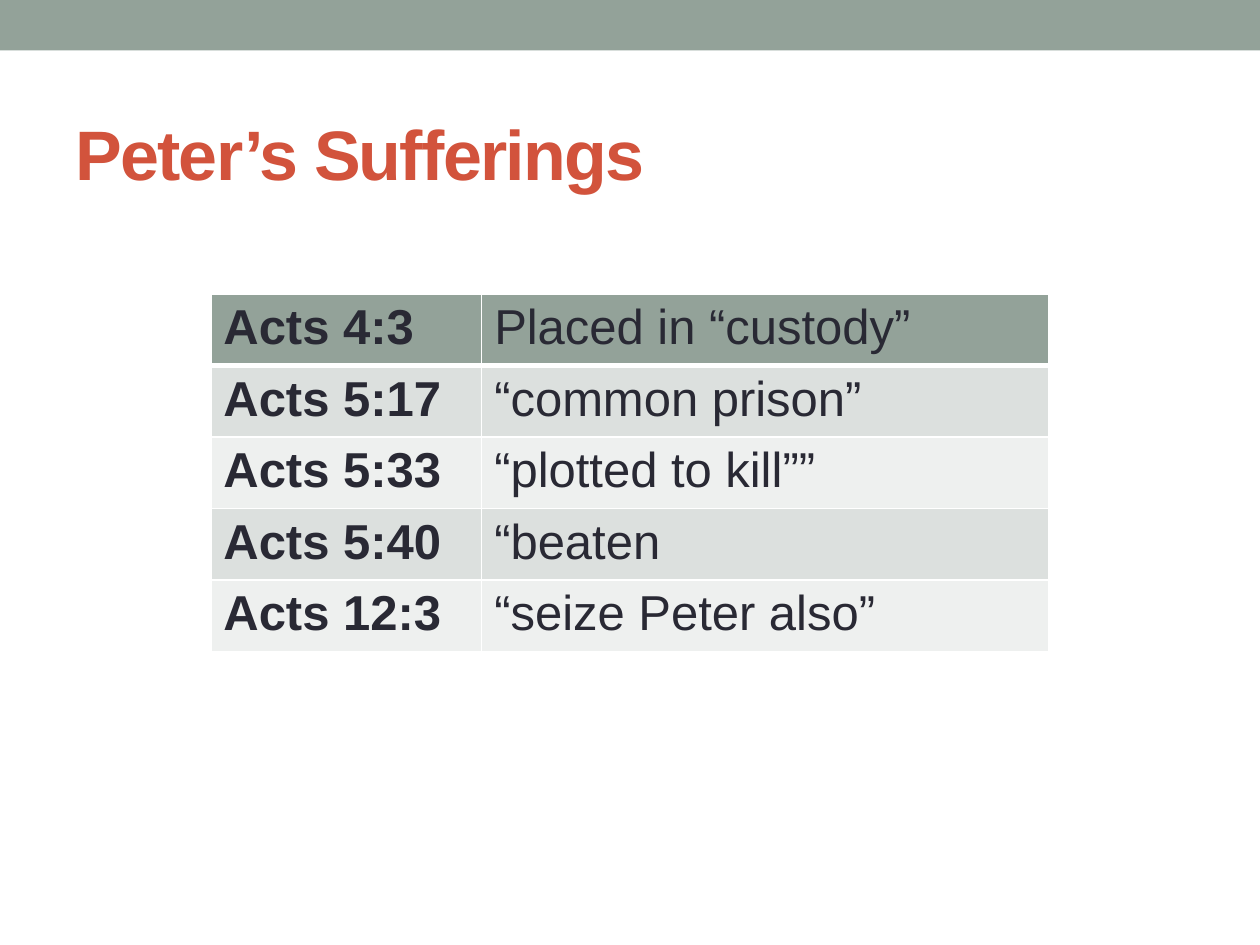
from pptx import Presentation
from pptx.dml.color import RGBColor
from pptx.enum.shapes import MSO_SHAPE as Shape
from pptx.enum.text import MSO_ANCHOR as Anchor
from pptx.oxml import parse_xml
from pptx.oxml.ns import nsdecls
from pptx.util import Cm, Pt

SAGE, RUST, INK, WHITE = "93A299", "D2533C", "292934", "FFFFFF"
BANDS = ("DCE0DE", "EEF0EF")

SUFFERINGS = [
    ("Acts 4:3", "Placed in “custody”"),
    ("Acts 5:17", "“common prison”"),
    ("Acts 5:33", "“plotted to kill””"),
    ("Acts 5:40", "“beaten"),
    ("Acts 12:3", "“seize Peter also”"),
]


def color(value):
    return RGBColor.from_string(value)


def box(*lengths):
    return [Cm(length) for length in lengths]


class SlideBuilder:
    font_name = "Arial"

    def __init__(self, slide):
        self.slide = slide

    def add_text(self, text_frame, text, hex_color, **formats):
        run = text_frame.paragraphs[0].add_run()
        run.text = text
        run.font.color.rgb = color(hex_color)
        for name, value in {"name": self.font_name, **formats}.items():
            setattr(run.font, name, value)
        return run

    def band(self, place, fill):
        shape = self.slide.shapes.add_shape(Shape.RECTANGLE, *box(*place))
        shape.shadow.inherit = False
        shape.fill.solid()
        shape.fill.fore_color.rgb = color(fill)
        shape.line.fill.background()

    def title(self, place, text):
        text_frame = self.slide.shapes.add_textbox(*box(*place)).text_frame
        text_frame.word_wrap = True
        text_frame.vertical_anchor = Anchor.MIDDLE
        run = self.add_text(text_frame, text, RUST, size=Pt(40), bold=True)
        run._r.get_or_add_rPr().set("spc", "-100")

    def borders(self, cell, widths):
        properties = cell._tc.get_or_add_tcPr()
        for side, width in widths.items():
            properties.append(parse_xml(
                f'<a:ln{side} {nsdecls("a")} w="{Pt(width)}"><a:solidFill>'
                f'<a:srgbClr val="{WHITE}"/></a:solidFill></a:ln{side}>'))

    def table(self, left, top, column_widths, row_height, rows):
        place = box(left, top, sum(column_widths), row_height * len(rows))
        table = self.slide.shapes.add_table(
            len(rows), len(column_widths), *place).table
        table.first_row = table.horz_banding = False
        for column, width in zip(table.columns, column_widths):
            column.width = Cm(width)
        for row_index, texts in enumerate(rows):
            table.rows[row_index].height = Cm(row_height)
            fill = BANDS[(row_index - 1) % 2] if row_index else SAGE
            # A thicker rule parts the first row from the rest
            widths = {"L": 1, "R": 1, "T": 3 if row_index == 1 else 1,
                      "B": 3 if row_index == 0 else 1}
            for column_index, text in enumerate(texts):
                cell = table.cell(row_index, column_index)
                self.borders(cell, widths)
                cell.fill.solid()
                cell.fill.fore_color.rgb = color(fill)
                self.add_text(cell.text_frame, text, INK,
                              size=Pt(28), bold=column_index == 0)


def main():
    presentation = Presentation()
    presentation.slide_width, presentation.slide_height = box(25.4, 19.05)
    slide = presentation.slides.add_slide(presentation.slide_layouts[6])
    builder = SlideBuilder(slide)

    # Top band and title
    builder.band((0, 0, 25.4, 1.02), SAGE)
    builder.title((1.27, 1.7, 22.86, 2.74), "Peter’s Sufferings")

    # References and what happened
    builder.table(4.25, 5.93, (5.46, 11.43), 1.35, SUFFERINGS)

    presentation.save("out.pptx")


if __name__ == "__main__":
    main()
